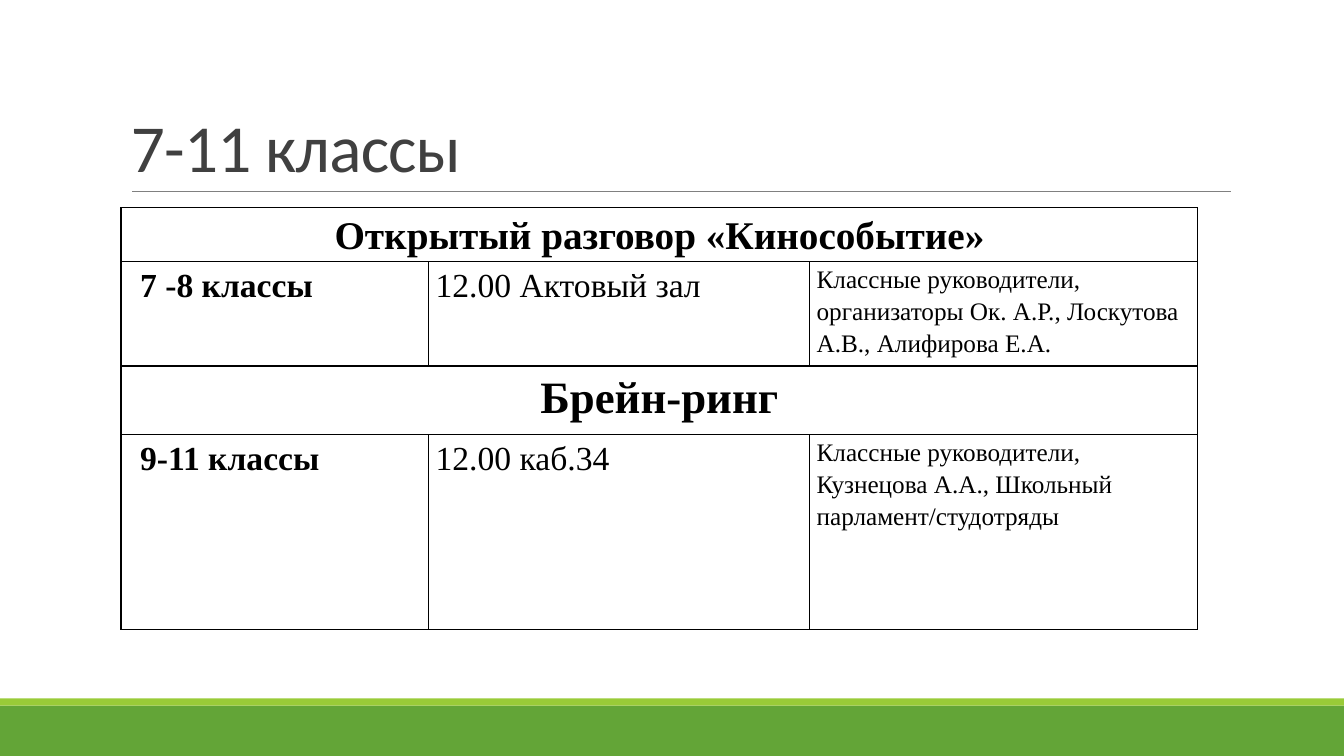
from lxml.etree import SubElement
from pptx import Presentation
from pptx.dml.color import RGBColor
from pptx.enum.shapes import MSO_CONNECTOR, MSO_SHAPE
from pptx.enum.text import MSO_ANCHOR, PP_ALIGN
from pptx.oxml import parse_xml
from pptx.oxml.ns import nsdecls, qn
from pptx.util import Inches, Pt


def color(value):
    return RGBColor.from_string(value)


def write(para, text, spacing, align, **font):
    para.line_spacing = spacing
    para.alignment = align
    span = para.add_run()
    span.text = text
    span.font.color.rgb = color(font.pop("ink"))
    for name, value in font.items():
        setattr(span.font, name, value)
    return span


deck = Presentation()
deck.slide_width, deck.slide_height = Inches(13.33), Inches(7.5)
page = deck.slides.add_slide(deck.slide_layouts[6])

for top, height, fill in ((7, 0.5, "63A537"), (6.93, 0.07, "99CB38")):
    band = page.shapes.add_shape(
        MSO_SHAPE.RECTANGLE, 0, Inches(top), deck.slide_width, Inches(height))
    band.shadow.inherit = False
    band.fill.solid()
    band.fill.fore_color.rgb = color(fill)
    band.line.fill.background()

rule = page.shapes.add_connector(
    MSO_CONNECTOR.STRAIGHT, Inches(1.31), Inches(1.9), Inches(12.21), Inches(1.9))
rule.line.color.rgb = color("808080")
rule.line.width = Pt(0.5)
SubElement(rule._element.spPr, qn("a:effectLst"))

left = Inches(1.2)
title = page.shapes.add_textbox(left, Inches(0.31), Inches(11), Inches(1.59))
title.text_frame.word_wrap = True
title.text_frame.vertical_anchor = MSO_ANCHOR.BOTTOM
heading = write(title.text_frame.paragraphs[0], "7-11 классы", 0.85, PP_ALIGN.LEFT,
                ink="404040", name="Calibri", size=Pt(48))
heading._r.get_or_add_rPr().set("spc", "-50")

columns = (3.05, 3.78, 3.85)
rows = (
    (0.47, 28, ("Открытый разговор «Кинособытие»",)),
    (0.91, None, ("7 -8 классы", "12.00 Актовый зал",
                  "Классные руководители, организаторы Ок. А.Р., Лоскутова А.В., Алифирова Е.А.")),
    (0.68, 32, ("Брейн-ринг",)),
    (1.93, None, ("9-11 классы", "12.00 каб.34",
                  "Классные руководители, Кузнецова А.А., Школьный парламент/студотряды")),
)
column_formats = (
    {"size": Pt(24), "bold": True, "align": PP_ALIGN.JUSTIFY},
    {"size": Pt(24), "bold": False, "align": PP_ALIGN.LEFT},
    {"size": Pt(18), "bold": False, "align": PP_ALIGN.LEFT},
)
cell_format = {"margin_left": Inches(0.07), "margin_right": Inches(0.07),
               "margin_top": 0, "margin_bottom": 0}

table = page.shapes.add_table(
    len(rows), len(columns), left, Inches(2.06),
    Inches(sum(columns)), Inches(sum(row[0] for row in rows))).table
table.first_row = table.horz_banding = False
for column, width in zip(table.columns, columns):
    column.width = Inches(width)

for index, (height, heading_size, texts) in enumerate(rows):
    table.rows[index].height = Inches(height)
    for position in range(len(columns)):
        cell = table.cell(index, position)
        for name, value in cell_format.items():
            setattr(cell, name, value)
        cell.fill.background()
        properties = cell._tc.get_or_add_tcPr()
        for order, side in enumerate("LRTB"):
            properties.insert(order, parse_xml(
                f'<a:ln{side} {nsdecls("a")} w="12700"><a:solidFill>'
                f'<a:srgbClr val="000000"/></a:solidFill></a:ln{side}>'))
    if heading_size:
        table.cell(index, 0).merge(table.cell(index, len(columns) - 1))
    for position, text in enumerate(texts):
        para = table.cell(index, position).text_frame.paragraphs[0]
        style = dict(column_formats[position])
        if heading_size:
            style.update(size=Pt(heading_size), align=PP_ALIGN.CENTER)
        elif position == 0:
            para._p.get_or_add_pPr().set("indent", str(Inches(0.12)))
        write(para, text, 1.15, ink="000000", name="Times New Roman", **style)

deck.save("out.pptx")
